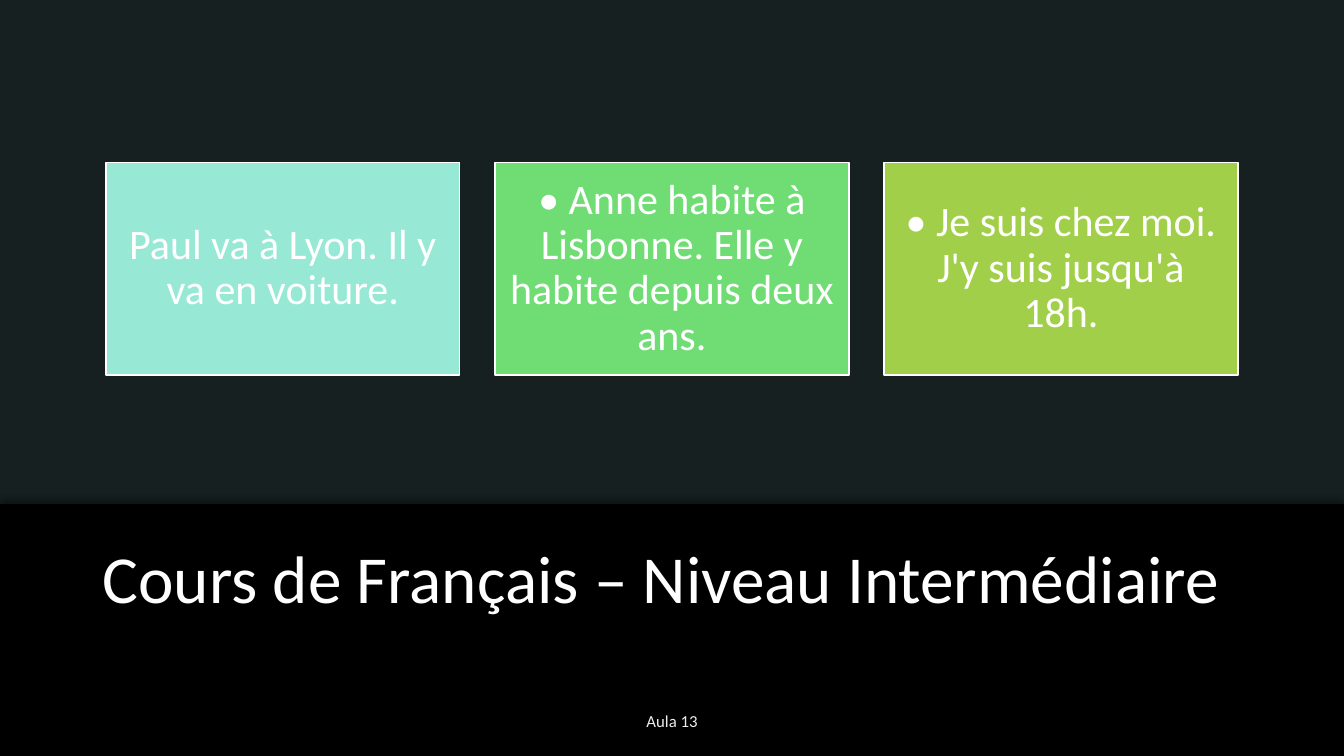
import dataclasses

import lxml.etree
import pptx
import pptx.dml.color
import pptx.enum.shapes
import pptx.enum.text
import pptx.oxml
import pptx.oxml.ns
import pptx.util

ALIGN = pptx.enum.text.PP_ALIGN
ANCHOR = pptx.enum.text.MSO_ANCHOR
SLIDE_W = pptx.util.Inches(13.33)
SLIDE_H = pptx.util.Inches(7.5)


@dataclasses.dataclass(frozen=True)
class Theme:
    font: str = "Calibri"
    black: str = "000000"
    white: str = "FFFFFF"
    footer: str = "EDEDED"
    tint: str = "94D7E4"
    cards: tuple = ("97E9D5", "6FDD74", "A2CF49")
    title_size: int = 48
    card_size: int = 30
    footer_size: int = 12


THEME = Theme()
EXAMPLES = (
    "Paul va à Lyon. Il y va en voiture.",
    "• Anne habite à Lisbonne. Elle y habite depuis deux ans.",
    "• Je suis chez moi. J'y suis jusqu'à 18h.",
)


def rgb(value):
    return pptx.dml.color.RGBColor.from_string(value)


def place(left, top, width, height):
    return (int(SLIDE_W * left / 100), int(SLIDE_H * top / 100),
            int(SLIDE_W * width / 100), int(SLIDE_H * height / 100))


def add_rect(s, box, fill, line=None):
    sp = s.shapes.add_shape(pptx.enum.shapes.MSO_SHAPE.RECTANGLE, *place(*box))
    sp.shadow.inherit = False
    sp.fill.solid()
    sp.fill.fore_color.rgb = rgb(fill)
    if line:
        sp.line.color.rgb = rgb(line)
        sp.line.width = pptx.util.Pt(1)
    else:
        sp.line.fill.background()
    return sp


def set_opacity(sp, percent):
    color = sp._element.spPr.find(".//" + pptx.oxml.ns.qn("a:srgbClr"))
    alpha = lxml.etree.SubElement(color, pptx.oxml.ns.qn("a:alpha"))
    alpha.set("val", str(percent * 1000))


def add_upward_shadow(sp):
    effects = sp._element.spPr.find(pptx.oxml.ns.qn("a:effectLst"))
    effects.append(pptx.oxml.parse_xml(
        f'<a:outerShdw {pptx.oxml.ns.nsdecls("a")} blurRad="{pptx.util.Pt(4)}" '
        f'dist="{pptx.util.Pt(3)}" dir="16200000" rotWithShape="0">'
        f'<a:srgbClr val="{THEME.black}"><a:alpha val="40000"/></a:srgbClr>'
        '</a:outerShdw>'))


def write(sp, text, size, color, frame, paragraph):
    tf = sp.text_frame
    for name, value in {"word_wrap": True, **frame}.items():
        setattr(tf, name, value)
    p = tf.paragraphs[0]
    for name, value in paragraph.items():
        setattr(p, name, value)
    r = p.add_run()
    r.text = text
    for name, value in {"name": THEME.font, "size": pptx.util.Pt(size)}.items():
        setattr(r.font, name, value)
    r.font.color.rgb = rgb(color)


def add_label(s, box, text, size, color, frame, paragraph):
    sp = s.shapes.add_textbox(*place(*box))
    write(sp, text, size, color, frame, paragraph)


def add_card(s, column, text, fill):
    left, pitch, width = 7.88, 28.95, 26.33
    sp = add_rect(s, (left + column * pitch, 21.47, width, 28.13), fill, THEME.white)
    sides = ("left", "top", "right", "bottom")
    frame = {f"margin_{side}": pptx.util.Inches(0.12) for side in sides}
    write(sp, text, THEME.card_size, THEME.white,
          {**frame, "vertical_anchor": ANCHOR.MIDDLE},
          {"alignment": ALIGN.CENTER, "line_spacing": 0.9})


def main():
    prs = pptx.Presentation()
    prs.slide_width, prs.slide_height = SLIDE_W, SLIDE_H
    s = prs.slides.add_slide(prs.slide_layouts[6])
    s.background.fill.solid()
    s.background.fill.fore_color.rgb = rgb(THEME.black)

    split = 66.67
    set_opacity(add_rect(s, (0, 0, 100, split), THEME.tint), 15)
    add_upward_shadow(add_rect(s, (0, split, 100, 100 - split), THEME.black))

    add_label(s, (6.9, 71.47, 86.25, 18.67), "Cours de Français – Niveau Intermédiaire",
              THEME.title_size, THEME.white,
              {"vertical_anchor": ANCHOR.TOP},
              {"alignment": ALIGN.LEFT, "line_spacing": 0.9})
    add_label(s, (33.13, 92.67, 33.75, 5.33), "Aula 13",
              THEME.footer_size, THEME.footer,
              {"vertical_anchor": ANCHOR.MIDDLE},
              {"alignment": ALIGN.CENTER, "space_after": pptx.util.Pt(6)})

    for column, (text, fill) in enumerate(zip(EXAMPLES, THEME.cards)):
        add_card(s, column, text, fill)

    prs.save("out.pptx")


if __name__ == "__main__":
    main()
